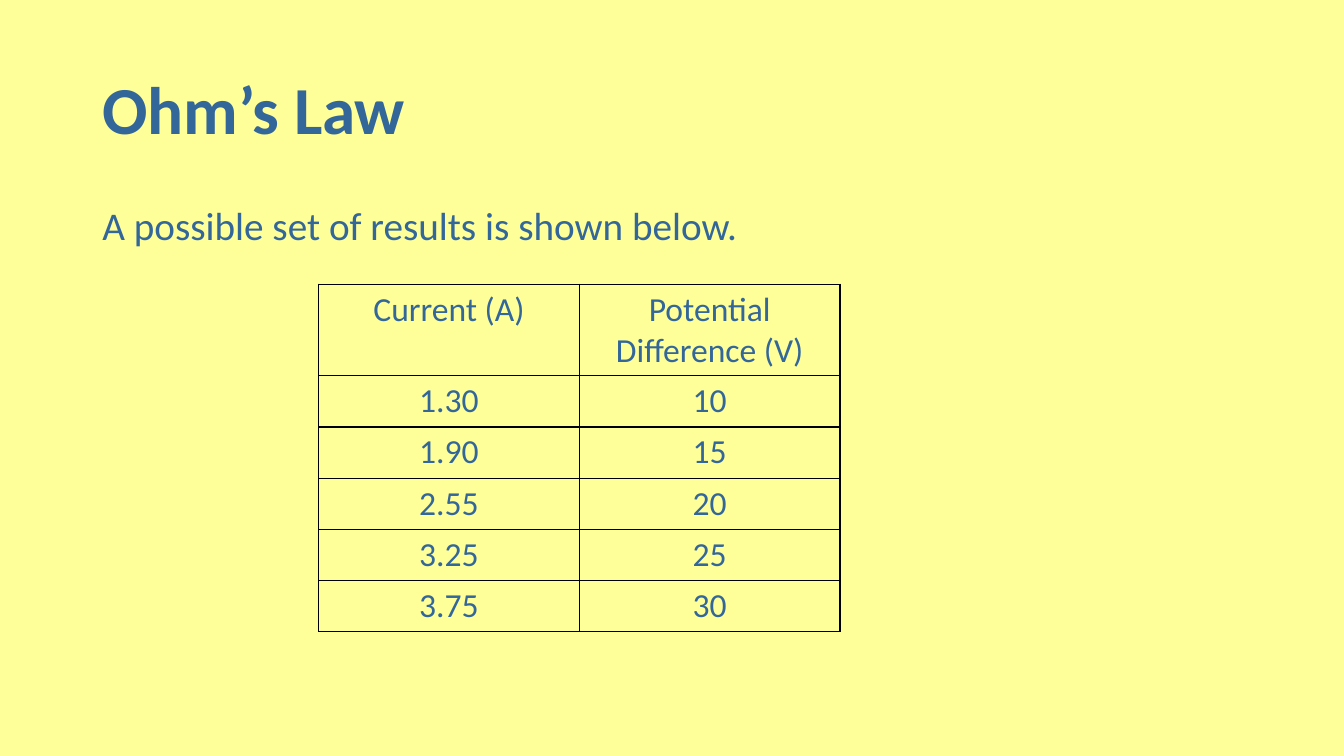
from dataclasses import dataclass

from lxml.etree import SubElement
from pptx import Presentation
from pptx.dml.color import RGBColor
from pptx.enum.text import MSO_ANCHOR as Anchor, PP_ALIGN as Align
from pptx.oxml.ns import qn
from pptx.util import Cm, Pt


@dataclass(frozen=True)
class Theme:
    font: str = "Calibri"
    background: str = "FFFF99"
    text: str = "336699"
    border: str = "000000"
    border_width: int = Pt(1)
    title_size: int = Pt(48)
    body_size: int = Pt(28)
    table_size: int = Pt(24)


theme = Theme()


def add_text(paragraph, text, size, align=Align.LEFT, bold=False):
    paragraph.alignment = align
    run = paragraph.add_run()
    run.text = text
    run.font.name = theme.font
    run.font.size = size
    run.font.bold = bold
    run.font.color.rgb = RGBColor.from_string(theme.text)


def add_borders(cell):
    properties = cell._tc.get_or_add_tcPr()
    for side in ("lnL", "lnR", "lnT", "lnB"):
        line = SubElement(properties, qn(f"a:{side}"), w=str(theme.border_width))
        fill = SubElement(line, qn("a:solidFill"))
        SubElement(fill, qn("a:srgbClr"), val=theme.border)


# Slide and background
presentation = Presentation()
presentation.slide_width, presentation.slide_height = Cm(33.87), Cm(19.05)
slide = presentation.slides.add_slide(presentation.slide_layouts[5])
slide.background.fill.solid()
slide.background.fill.fore_color.rgb = RGBColor.from_string(theme.background)

# Title
title = slide.shapes.title
title.left, title.top, title.width, title.height = Cm(2.33), Cm(1.01), Cm(29.21), Cm(3.68)
title.text_frame.vertical_anchor = Anchor.MIDDLE
title_paragraph = title.text_frame.paragraphs[0]
title_paragraph.line_spacing = 0.9
add_text(title_paragraph, "Ohm’s Law", theme.title_size, bold=True)

# Introduction
introduction = slide.shapes.add_textbox(Cm(2.33), Cm(5.07), Cm(29.21), Cm(12.09))
introduction.text_frame.word_wrap = True
introduction_paragraph = introduction.text_frame.paragraphs[0]
introduction_paragraph.line_spacing = 0.9
introduction_paragraph.space_before = Pt(10)
add_text(introduction_paragraph, "A possible set of results is shown below.", theme.body_size)

# Results table
results = [
    ("Current (A)", "Potential Difference (V)"),
    ("1.30", "10"),
    ("1.90", "15"),
    ("2.55", "20"),
    ("3.25", "25"),
    ("3.75", "30"),
]
header_height, row_height, column_width = Cm(2.31), Cm(1.29), Cm(6.57)
table = slide.shapes.add_table(
    len(results), 2, Cm(8.03), Cm(7.16),
    2 * column_width, header_height + (len(results) - 1) * row_height,
).table
table.first_row = False
table.horz_banding = False
for column in table.columns:
    column.width = column_width
for row_index, values in enumerate(results):
    table.rows[row_index].height = row_height if row_index else header_height
    for column_index, value in enumerate(values):
        cell = table.cell(row_index, column_index)
        add_borders(cell)
        cell.fill.background()
        add_text(cell.text_frame.paragraphs[0], value, theme.table_size, Align.CENTER)

presentation.save("out.pptx")
